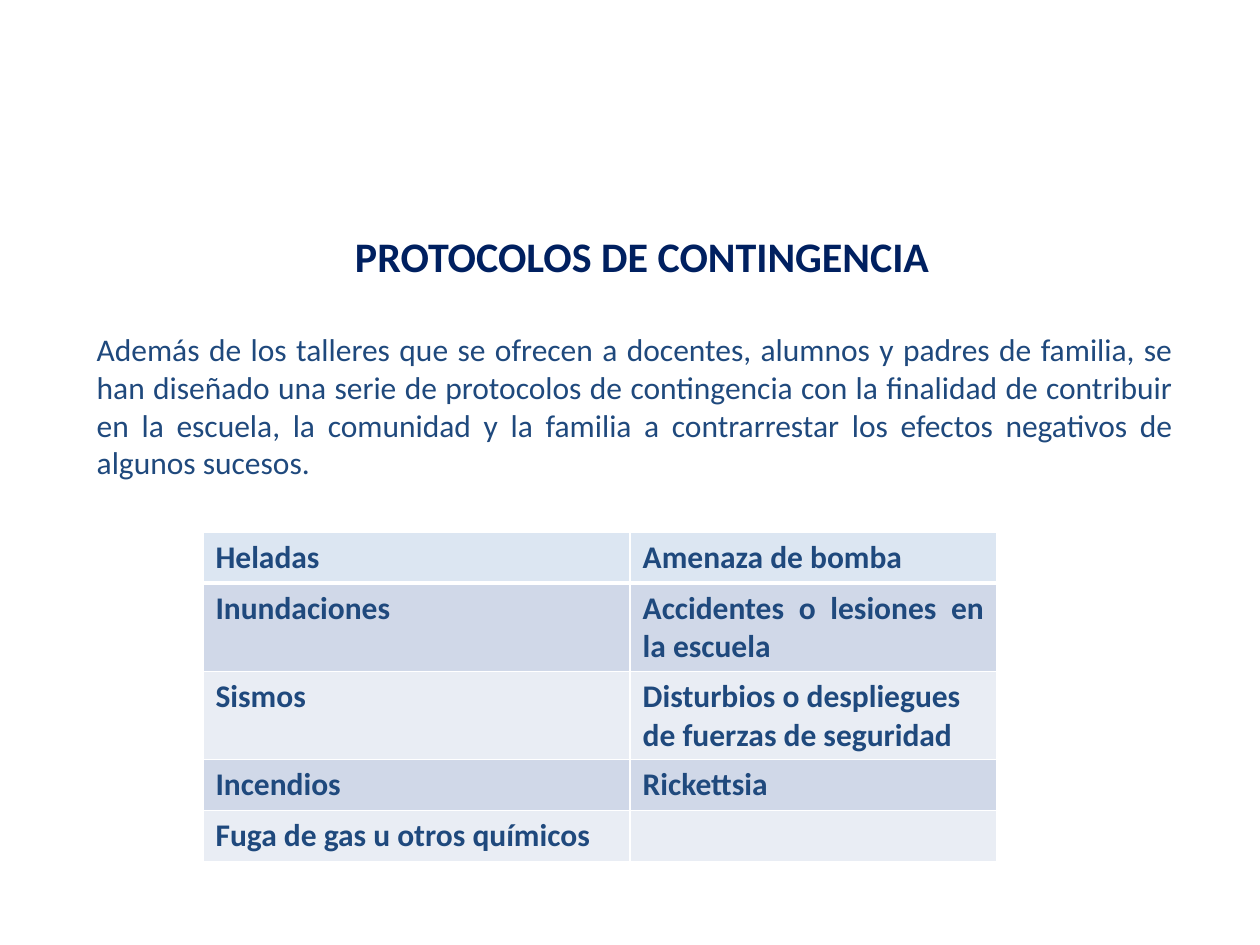
from dataclasses import dataclass

import pptx
import pptx.dml.color
import pptx.enum.text
import pptx.oxml
import pptx.oxml.ns
import pptx.util

Pt = pptx.util.Pt
Align = pptx.enum.text.PP_ALIGN
AutoSize = pptx.enum.text.MSO_AUTO_SIZE

NAVY, BLUE, WHITE = "002060", "1F497D", "FFFFFF"
HEADER_FILL, DARK_BAND, LIGHT_BAND = "DCE6F2", "D0D8E8", "E9EDF4"
ONE_LINE, TWO_LINES = 29.2, 50.4
HANGING = 36


@dataclass
class TextBlock:
    left: float
    top: float
    width: float
    height: float
    text: str
    size: float
    color: str
    bold: bool
    align: Align
    wrap: bool


@dataclass
class ProtocolRow:
    left_text: str
    right_text: str
    right_align: Align
    height: float


BLOCKS = [
    TextBlock(195.8, 128.2, 345.6, 36, "PROTOCOLOS DE CONTINGENCIA",
              24, NAVY, True, Align.LEFT, False),
    TextBlock(48.2, 185, 629.3, 94.3,
              "Además de los talleres que se ofrecen a docentes, alumnos y padres de "
              "familia, se han diseñado una serie de protocolos de contingencia con la "
              "finalidad de contribuir en la escuela, la comunidad y la familia a "
              "contrarrestar los efectos negativos de algunos sucesos.",
              18, BLUE, False, Align.JUSTIFY, True),
]

ROWS = [
    ProtocolRow("Heladas", "Amenaza de bomba", Align.JUSTIFY, ONE_LINE),
    ProtocolRow("Inundaciones", "Accidentes o lesiones en la escuela",
                Align.JUSTIFY, TWO_LINES),
    ProtocolRow("Sismos", "Disturbios o despliegues de fuerzas de seguridad",
                Align.LEFT, TWO_LINES),
    ProtocolRow("Incendios", "Rickettsia", Align.LEFT, ONE_LINE),
    ProtocolRow("Fuga de gas u otros químicos", "", Align.LEFT, ONE_LINE),
]
COLUMN_WIDTHS = [244.1, 209.5]


def rgb(value: str) -> pptx.dml.color.RGBColor:
    return pptx.dml.color.RGBColor.from_string(value)


def write(para, text: str, size: float, color: str, bold: bool, align: Align) -> None:
    para.alignment = align
    font = para.font
    if text:
        span = para.add_run()
        span.text = text
        font = span.font
    for name, value in {"name": "Calibri", "size": Pt(size), "bold": bold}.items():
        setattr(font, name, value)
    font.color.rgb = rgb(color)


def add_block(page, block: TextBlock) -> None:
    box = page.shapes.add_textbox(
        *(Pt(v) for v in (block.left, block.top, block.width, block.height)))
    box.text_frame.word_wrap = block.wrap
    box.text_frame.auto_size = AutoSize.SHAPE_TO_FIT_TEXT
    write(box.text_frame.paragraphs[0], block.text, block.size, block.color,
          block.bold, block.align)


def set_borders(cell, color: str, bottom: float) -> None:
    """Draw 1 pt edges, with a separate weight for the bottom one."""
    properties = cell._tc.get_or_add_tcPr()
    for side, weight in {"L": 1, "R": 1, "T": 1, "B": bottom}.items():
        properties.append(pptx.oxml.parse_xml(
            f'<a:ln{side} {pptx.oxml.ns.nsdecls("a")} w="{Pt(weight)}">'
            f'<a:solidFill><a:srgbClr val="{color}"/></a:solidFill></a:ln{side}>'))


def add_protocol_table(page, left: float, top: float) -> None:
    height = sum(row.height for row in ROWS)
    table = page.shapes.add_table(
        len(ROWS), len(COLUMN_WIDTHS), Pt(left), Pt(top),
        Pt(sum(COLUMN_WIDTHS)), Pt(height)).table
    for column, width in zip(table.columns, COLUMN_WIDTHS):
        column.width = Pt(width)
    for index, row in enumerate(ROWS):
        table.rows[index].height = Pt(row.height)
        band = DARK_BAND if index % 2 else LIGHT_BAND
        entries = [(row.left_text, Align.JUSTIFY), (row.right_text, row.right_align)]
        for cell, (text, align) in zip(table.rows[index].cells, entries):
            set_borders(cell, WHITE, 1 if index else 3)
            cell.fill.solid()
            cell.fill.fore_color.rgb = rgb(band if index else HEADER_FILL)
            write(cell.text_frame.paragraphs[0], text, 18, BLUE, True, align)
        indent = table.cell(index, 0).text_frame.paragraphs[0]._p.get_or_add_pPr()
        indent.set("marL", str(Pt(HANGING)))
        indent.set("indent", str(-Pt(HANGING)))


def main() -> None:
    deck = pptx.Presentation()
    deck.slide_width, deck.slide_height = Pt(720), Pt(540)
    page = deck.slides.add_slide(deck.slide_layouts[6])
    for block in BLOCKS:
        add_block(page, block)
    add_protocol_table(page, 116, 304)
    deck.save("out.pptx")


if __name__ == "__main__":
    main()
